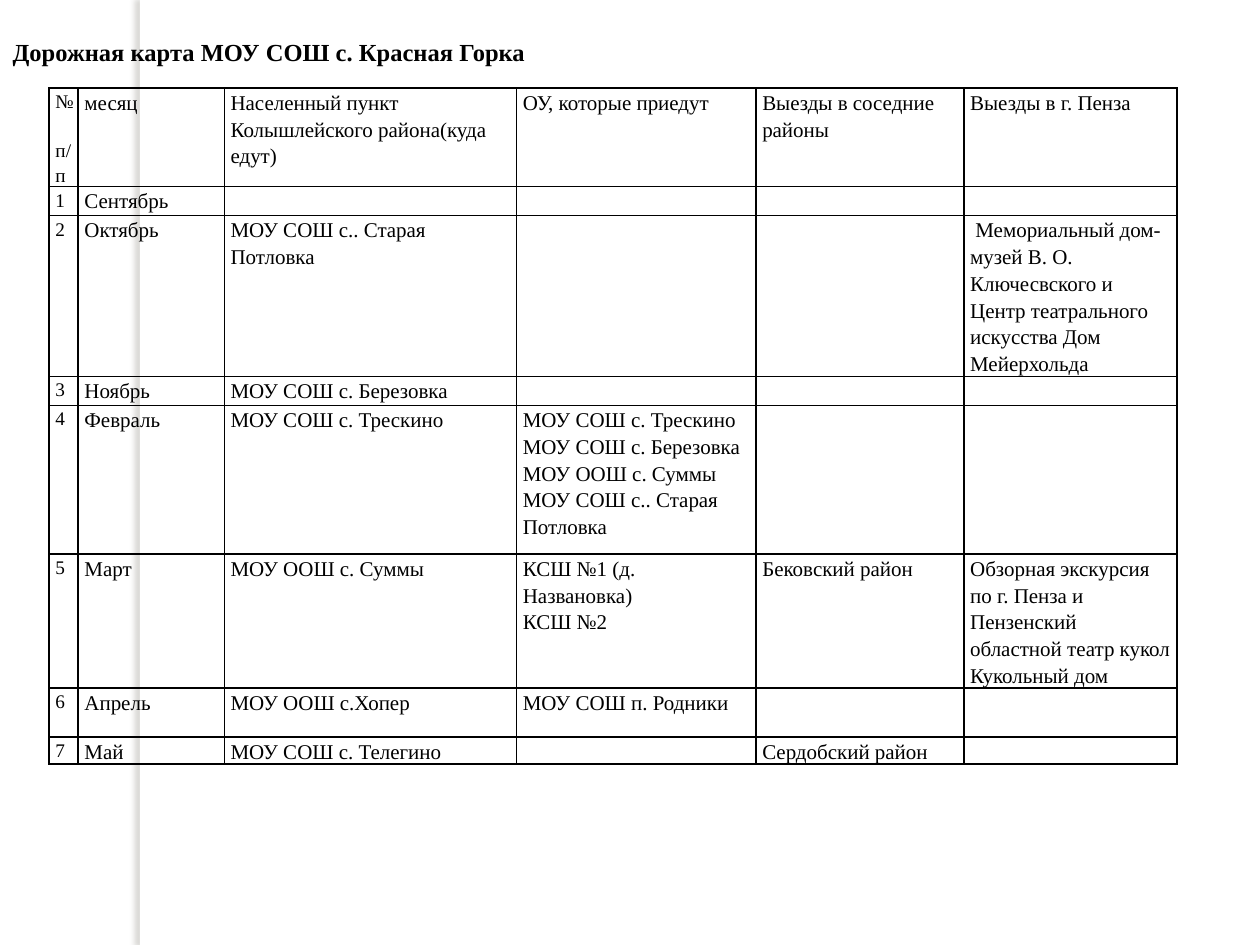
"""Build the school road map slide with its table of monthly trips."""
from lxml.etree import SubElement
from pptx import Presentation
from pptx.dml.color import RGBColor
from pptx.enum.shapes import MSO_SHAPE
from pptx.enum.text import MSO_ANCHOR, PP_ALIGN
from pptx.oxml.ns import qn
from pptx.util import Inches, Pt

FONT = "Times New Roman"
COLORS = {"ink": "000000", "paper": "FFFFFF", "shade": "736F63"}
WIDTHS = [0.23, 1.16, 2.32, 1.9, 1.65, 1.69]
HEIGHTS = [0.47, 0.23, 1.11, 0.23, 1.18, 0.94, 0.39, 0.21]
ROWS = [
    ["№ п/п", "месяц", "Населенный пункт Колышлейского района(куда едут)",
     "ОУ, которые приедут", "Выезды в соседние районы", "Выезды в г. Пенза"],
    ["1", "Сентябрь", "", "", "", ""],
    ["2", "Октябрь", "МОУ СОШ с.. Старая Потловка", "", "",
     " Мемориальный дом-музей В. О. Ключесвского и Центр театрального "
     "искусства Дом Мейерхольда"],
    ["3", "Ноябрь", "МОУ СОШ с. Березовка", "", "", ""],
    ["4", "Февраль", "МОУ СОШ с. Трескино",
     "МОУ СОШ с. Трескино\nМОУ СОШ с. Березовка\nМОУ ООШ с. Суммы\n"
     "МОУ СОШ с.. Старая Потловка", "", ""],
    ["5", "Март", "МОУ ООШ с. Суммы", "КСШ №1 (д. Названовка)\nКСШ №2",
     "Бековский район",
     "Обзорная экскурсия по г. Пенза и Пензенский областной театр "
     "кукол Кукольный дом"],
    ["6", "Апрель", "МОУ ООШ с.Хопер", "МОУ СОШ п. Родники", "", ""],
    ["7", "Май", "МОУ СОШ с. Телегино", "", "Сердобский район", ""],
]


def style(run, size, bold=False):
    run.font.name = FONT
    run.font.size = Pt(size)
    run.font.bold = bold
    run.font.color.rgb = RGBColor.from_string(COLORS["ink"])


def border(cell):
    props = cell._tc.get_or_add_tcPr()
    for side in ("lnL", "lnR", "lnT", "lnB"):
        line = SubElement(props, qn(f"a:{side}"), w=str(Pt(1)))
        fill = SubElement(line, qn("a:solidFill"))
        SubElement(fill, qn("a:srgbClr"), val=COLORS["ink"])


deck = Presentation()
deck.slide_width, deck.slide_height = Inches(10), Inches(7.5)
slide = deck.slides.add_slide(deck.slide_layouts[5])
shapes = slide.shapes

strip = shapes.add_shape(MSO_SHAPE.RECTANGLE, Inches(1.11), 0, Inches(0.08), Inches(7.5))
strip.fill.solid()
strip.fill.fore_color.rgb = RGBColor.from_string(COLORS["paper"])
strip.line.fill.background()
strip.shadow.inherit = False
effects = strip._element.spPr.find(qn("a:effectLst"))
shadow = SubElement(effects, qn("a:outerShdw"), blurRad=str(Pt(3)), dist=str(Pt(3)),
                    dir="10800000", algn="tl", rotWithShape="0")
shade = SubElement(shadow, qn("a:srgbClr"), val=COLORS["shade"])
SubElement(shade, qn("a:alpha"), val="25000")
shapes._spTree.insert(2, strip._element)

grid = shapes.add_table(len(ROWS), len(WIDTHS), Inches(0.39), Inches(0.7),
                        Inches(sum(WIDTHS)), Inches(sum(HEIGHTS)))
table = grid.table
table.first_row = table.horz_banding = False
for column, width in zip(table.columns, WIDTHS):
    column.width = Inches(width)
for row, height, texts in zip(table.rows, HEIGHTS, ROWS):
    row.height = Inches(height)
    for index, (cell, text) in enumerate(zip(row.cells, texts)):
        size = 12 if index else 11
        cell.margin_left = cell.margin_right = Inches(0.05)
        cell.margin_top = cell.margin_bottom = 0
        border(cell)
        cell.fill.background()
        cell.text_frame.text = text
        for para in cell.text_frame.paragraphs:
            para.line_spacing = 1.15 if text else 1
            for run in para.runs:
                style(run, size)
            if not text:
                SubElement(para._p, qn("a:endParaRPr"), sz=str(size * 100))

title = shapes.title
title.left, title.top, title.width, title.height = 0, 0, Inches(4.3), Inches(0.82)
frame = title.text_frame
frame.text = "Дорожная карта МОУ СОШ с. Красная Горка"
frame.word_wrap = False
frame.vertical_anchor = MSO_ANCHOR.MIDDLE
frame.paragraphs[0].alignment = PP_ALIGN.LEFT
style(frame.paragraphs[0].runs[0], 14, True)

deck.save("out.pptx")
